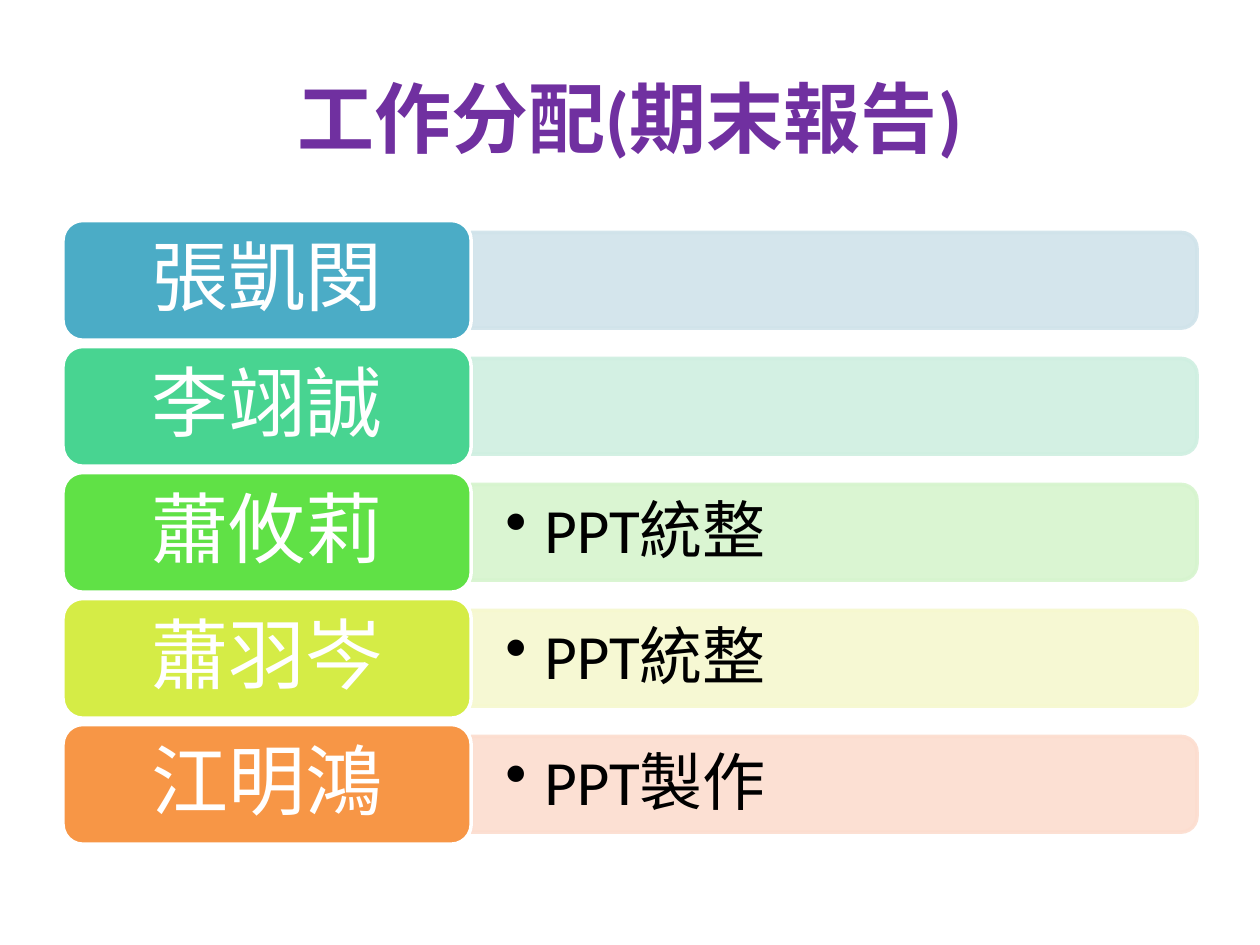
import pptx
import pptx.util
import pptx.dml.color
import pptx.enum.shapes
import pptx.enum.text
import pptx.oxml
import pptx.oxml.ns
import lxml.etree

Inches = pptx.util.Inches
Pt = pptx.util.Pt
SHAPE = pptx.enum.shapes.MSO_SHAPE
ALIGN = pptx.enum.text.PP_ALIGN

COLORS = {"title": "7030A0", "white": "FFFFFF", "black": "000000"}

# Name, task, tab colour, bar colour
ROWS = [
    ("張凱閔", "", "4BACC6", "D0E3EA"),
    ("李翊誠", "", "48D491", "CFEFE1"),
    ("蕭攸莉", "PPT統整", "60E146", "D6F4CE"),
    ("蕭羽岑", "PPT統整", "D5EC46", "F6F8CF"),
    ("江明鴻", "PPT製作", "F79646", "FCDDCF"),
]
LEFT, TOP, PITCH = 0.5, 1.75, 1.0
TAB_W, TAB_H = 3.24, 0.95
BAR_W, BAR_H = 5.76, 0.76


def rgb(color):
    return pptx.dml.color.RGBColor.from_string(color)


class Deck:
    font = "Calibri"

    def __init__(self, slide):
        self.slide = slide

    def label(self, shape, text, size, color, pad=(0.1, 0.05),
              align=ALIGN.CENTER, bold=False, space=None, bullet=False):
        frame = shape.text_frame
        frame.word_wrap = True
        frame.vertical_anchor = pptx.enum.text.MSO_ANCHOR.MIDDLE
        frame.margin_left = frame.margin_right = Inches(pad[0])
        frame.margin_top = frame.margin_bottom = Inches(pad[1])
        para = frame.paragraphs[0]
        para.alignment = align
        if space:
            para.line_spacing = space
        if bullet:
            props = para._p.get_or_add_pPr()
            props.set("marL", str(Inches(0.31)))
            props.set("indent", str(Inches(-0.31)))
            mark = lxml.etree.SubElement(props, pptx.oxml.ns.qn("a:buChar"))
            mark.set("char", "•")
        run = para.add_run()
        run.text = text
        run.font.name = self.font
        run.font.size = Pt(size)
        run.font.bold = bold
        run.font.color.rgb = rgb(color)

    def text(self, x, y, w, h, text, size, color, **style):
        box = self.slide.shapes.add_textbox(
            Inches(x), Inches(y), Inches(w), Inches(h))
        self.label(box, text, size, color, **style)

    def block(self, kind, x, y, w, h, fill, line):
        shape = self.slide.shapes.add_shape(
            kind, Inches(x), Inches(y), Inches(w), Inches(h))
        shape.shadow.inherit = False
        shape.fill.solid()
        shape.fill.fore_color.rgb = rgb(fill)
        shape.line.color.rgb = rgb(line)
        shape.line.width = Pt(2)
        return shape

    def tab(self, y, name, fill):
        shape = self.block(SHAPE.ROUNDED_RECTANGLE, LEFT, y, TAB_W, TAB_H,
                           fill, COLORS["white"])
        self.label(shape, name, 44, COLORS["white"], pad=(0.18, 0.09),
                   space=0.9)

    def bar(self, mid, color):
        # Upright shape turned on its side, so that the right end is round
        x = LEFT + TAB_W + (BAR_W - BAR_H) / 2
        shape = self.block(SHAPE.ROUND_2_SAME_RECTANGLE, x, mid - BAR_W / 2,
                           BAR_H, BAR_W, color, color)
        shape.rotation = 90
        for tint in shape._element.spPr.iter(pptx.oxml.ns.qn("a:srgbClr")):
            alpha = lxml.etree.SubElement(tint, pptx.oxml.ns.qn("a:alpha"))
            alpha.set("val", "90000")

    def task(self, mid, text):
        self.text(LEFT + TAB_W, mid - 0.34, 5.72, 0.69, text, 36,
                  COLORS["black"], pad=(0.27, 0.14), align=ALIGN.LEFT,
                  space=0.9, bullet=True)


def main():
    prs = pptx.Presentation()
    prs.slide_width, prs.slide_height = Inches(10), Inches(7.5)
    deck = Deck(prs.slides.add_slide(prs.slide_layouts[6]))

    # Title
    deck.text(0.5, 0.3, 9, 1.25, "工作分配(期末報告)", 44,
              COLORS["title"], bold=True)

    # One row for each member
    for i, (name, task, dark, light) in enumerate(ROWS):
        y = TOP + i * PITCH
        mid = y + TAB_H / 2
        deck.bar(mid, light)
        if task:
            deck.task(mid, task)
        deck.tab(y, name, dark)

    prs.save("out.pptx")


if __name__ == "__main__":
    main()
